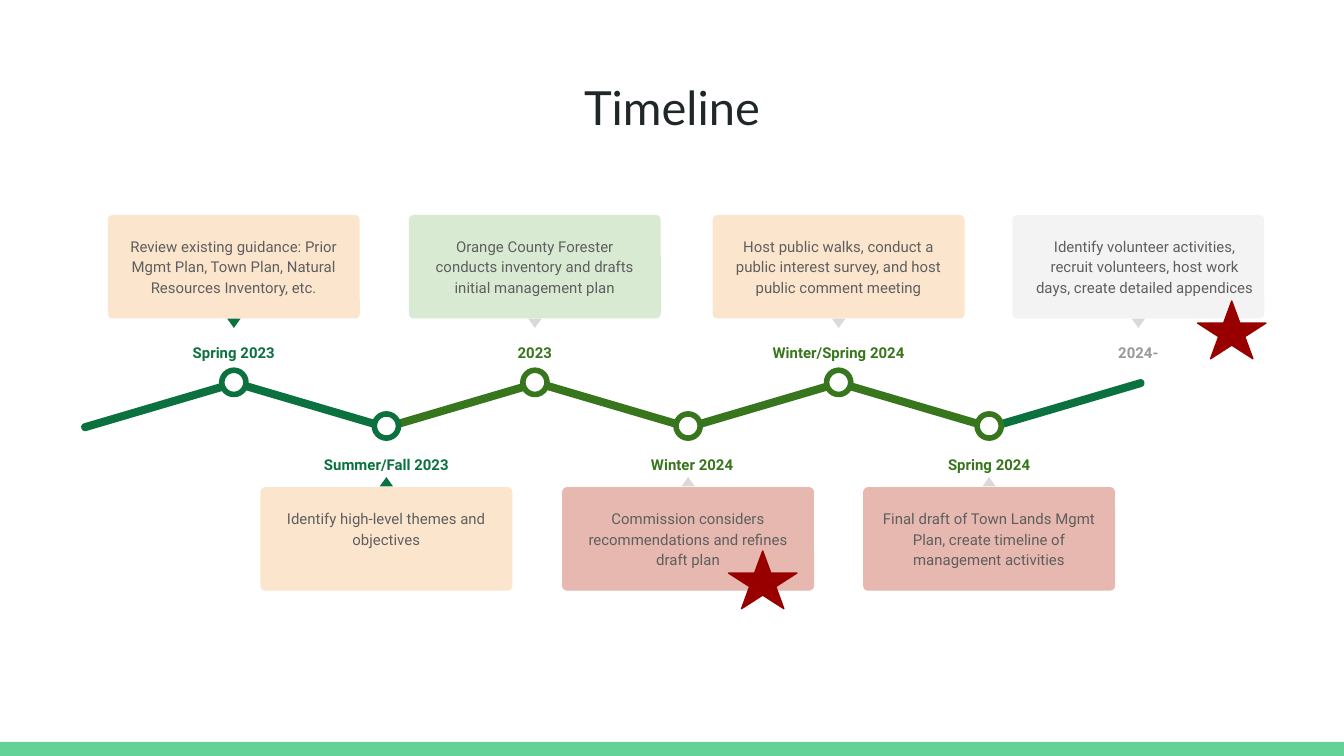
import pptx
import pptx.util
import pptx.dml.color
import pptx.enum.shapes
import pptx.enum.text

# The grid has 100 columns across the slide; rows have the same size.
UNIT = pptx.util.Inches(10) // 100
ROWS = 56.25
SHAPE = pptx.enum.shapes.MSO_SHAPE

PINE, LEAF, SILVER, GRAY = "0B713F", "38761D", "D9D9D9", "999999"
PEACH, MINT, ROSE, PALE = "FCE5CD", "D9EAD3", "E6B8AF", "F3F3F3"
CRIMSON = "980000"

CARD_W, CARD_H, NODE, PAD = 18.74, 7.7, 1.8, 0.48
POINTER_W, POINTER_H, LABEL_H = 1.0, 0.7, 3.0

# Row offsets of the parts inside a milestone above or below the path
ABOVE = {"card": 0, "pointer": 7.7, "label": 8.4, "node": 11.55}
BELOW = {"node": 0, "label": 1.9, "pointer": 4.7, "card": 5.45}

# Centre column, date, date centre, date width, date colour,
# card fill, pointer, node, text
MILESTONES = [
    (17.4, "Spring 2023", 17.4, 9.2, PINE, PEACH, PINE, PINE,
     "Review existing guidance: Prior Mgmt Plan, Town Plan, Natural Resources Inventory, etc."),
    (28.75, "Summer/Fall 2023", 28.75, 12.8, PINE, PEACH, PINE, PINE,
     "Identify high-level themes and objectives"),
    (39.8, "2023", 39.8, 7.6, LEAF, MINT, SILVER, LEAF,
     "Orange County Forester conducts inventory and drafts initial management plan"),
    (51.2, "Winter 2024", 51.5, 10.2, LEAF, ROSE, SILVER, LEAF,
     "Commission considers recommendations and refines draft plan"),
    (62.4, "Winter/Spring 2024", 62.4, 12.8, LEAF, PEACH, SILVER, LEAF,
     "Host public walks, conduct a public interest survey, and host public comment meeting"),
    (73.6, "Spring 2024", 73.6, 8.8, LEAF, ROSE, SILVER, LEAF,
     "Final draft of Town Lands Mgmt Plan, create timeline of management activities"),
    (84.7, "2024-", 84.7, 8.8, GRAY, PALE, SILVER, None,
     "Identify volunteer activities, recruit volunteers, host work days, create detailed appendices"),
]
SEGMENT_COLORS = [PINE, PINE, LEAF, LEAF, LEAF, LEAF, PINE]


def rgb(value):
    return pptx.dml.color.RGBColor.from_string(value)


def to_emu(box):
    return [round(v * UNIT) for v in box]


def add_shape(s, kind, box, fill, line=None, line_pt=1, rotation=0):
    sp = s.shapes.add_shape(kind, *to_emu(box))
    sp.shadow.inherit = False
    sp.fill.solid()
    sp.fill.fore_color.rgb = rgb(fill)
    if line:
        sp.line.color.rgb = rgb(line)
        sp.line.width = pptx.util.Pt(line_pt)
    else:
        sp.line.fill.background()
    sp.rotation = rotation
    return sp


def add_text(s, box, text, size, color, font="Roboto", bold=False, spacing=1.15):
    tf = s.shapes.add_textbox(*to_emu(box)).text_frame
    tf.word_wrap = True
    tf.vertical_anchor = pptx.enum.text.MSO_ANCHOR.TOP
    tf.margin_left = tf.margin_right = tf.margin_top = UNIT
    tf.margin_bottom = 0  # keeps a line in a low box from being pushed up
    p = tf.paragraphs[0]
    p.alignment = pptx.enum.text.PP_ALIGN.CENTER
    p.line_spacing = spacing
    r = p.add_run()
    r.text = text
    r.font.size = pptx.util.Pt(size)
    r.font.name = font
    r.font.bold = bold
    r.font.color.rgb = rgb(color)


def add_path(s, box):
    """Zigzag of equal bars, rising and falling in turn."""
    left, top, width, height = box
    length, tilt = 12.2, 16.4
    step = (width - length) / (len(SEGMENT_COLORS) - 1)
    for i, color in enumerate(SEGMENT_COLORS):
        bar = add_shape(s, SHAPE.ROUNDED_RECTANGLE,
                        (left + i * step, top, length, height), color,
                        rotation=tilt if i % 2 else -tilt)
        bar.adjustments[0] = 0.5


def add_milestone(s, left, top, below, milestone):
    _, date, date_mid, date_w, date_color, card_fill, pointer, node, text = milestone
    rows = {part: top + dy for part, dy in (BELOW if below else ABOVE).items()}
    mid = left + CARD_W / 2

    card = add_shape(s, SHAPE.ROUNDED_RECTANGLE,
                     (left, rows["card"], CARD_W, CARD_H), card_fill)
    card.adjustments[0] = 0.045
    # The card without a node has text that runs to its right edge
    text_w = CARD_W - 2 * PAD if node else CARD_W
    add_text(s, (left + PAD, rows["card"] + PAD, text_w, CARD_H - 2 * PAD),
             text, 8, "5E5E5E")
    add_shape(s, SHAPE.ISOSCELES_TRIANGLE,
              (mid - POINTER_W / 2, rows["pointer"], POINTER_W, POINTER_H),
              pointer, rotation=0 if below else 180)
    add_text(s, (date_mid - date_w / 2, rows["label"], date_w, LABEL_H),
             date, 8, date_color, bold=True)
    if node:
        add_shape(s, SHAPE.OVAL, (mid - NODE / 2, rows["node"], NODE, NODE),
                  "FFFFFF", node, 3)


def add_star(s, box):
    add_shape(s, SHAPE.STAR_5_POINT, box, CRIMSON, CRIMSON, 0.75)


def add_timeline(s):
    add_path(s, (5.8, 29.85, 79.6, 0.6))
    for i, milestone in enumerate(MILESTONES):
        below = i % 2 == 1
        add_milestone(s, milestone[0] - CARD_W / 2, 30.8 if below else 16,
                      below, milestone)
    for left, top in ((54.2, 41), (89.1, 22.4)):
        add_star(s, (left, top, 5.1, 4.3))


def main():
    prs = pptx.Presentation()
    prs.slide_width, prs.slide_height = to_emu((100, ROWS))
    s = prs.slides.add_slide(prs.slide_layouts[6])
    add_shape(s, SHAPE.RECTANGLE, (0, ROWS - 1.05, 100, 1.05), "63D297")
    add_text(s, (3.4, 4.85, 93.2, 6.3), "Timeline", 25.2, "202729",
             font="Lato", spacing=1.0)
    add_timeline(s)
    prs.save("out.pptx")


if __name__ == "__main__":
    main()
